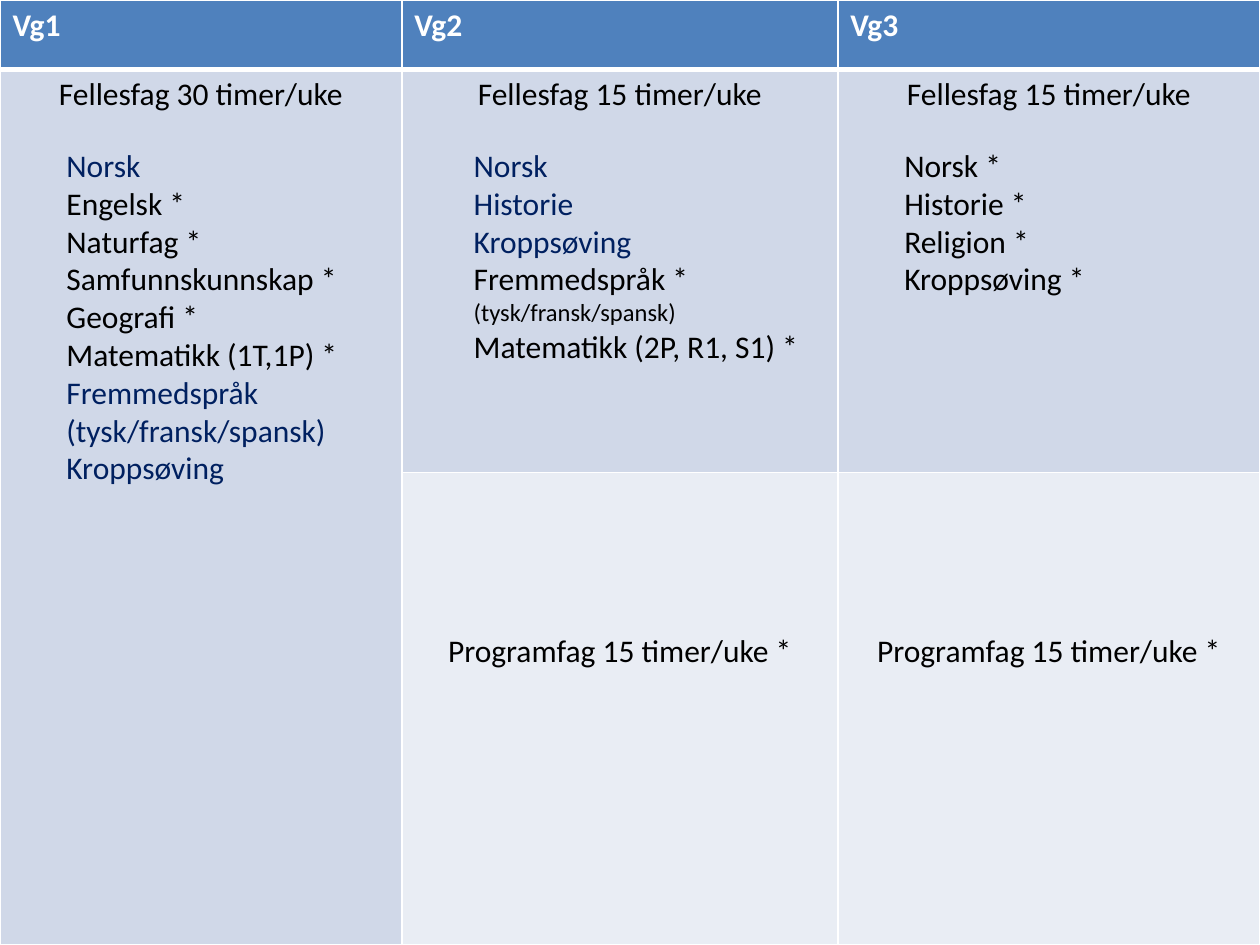
from dataclasses import dataclass

import lxml.etree
import pptx
import pptx.dml.color
import pptx.enum.text
import pptx.oxml.ns
import pptx.util

Cm = pptx.util.Cm
ALIGN = pptx.enum.text.PP_ALIGN

COLORS = {
    "header": "4F81BD",
    "common": "D0D8E8",
    "programme": "E9EDF4",
    "border": "FFFFFF",
    "white": "FFFFFF",
    "black": "000000",
    "navy": "002060",
}
COLUMN_WIDTHS = (8.1, 8.79, 8.51)
ROW_HEIGHTS = (1.4, 8.13, 9.52)
SUBJECTS_TOP = 2.82


@dataclass
class Subject:
    name: str
    color: str = "black"
    note: str = ""


@dataclass
class Year:
    title: str
    common: str
    programme: str
    left: float
    width: float
    height: float
    subjects: list[Subject]


YEARS = [
    Year("Vg1", "Fellesfag 30 timer/uke", "", 1.09, 6.6, 7.19, [
        Subject("Norsk", "navy"),
        Subject("Engelsk *"),
        Subject("Naturfag *"),
        Subject("Samfunnskunnskap *"),
        Subject("Geografi *"),
        Subject("Matematikk (1T,1P) *"),
        Subject("Fremmedspråk (tysk/fransk/spansk)", "navy"),
        Subject("Kroppsøving", "navy"),
    ]),
    Year("Vg2", "Fellesfag 15 timer/uke", "Programfag 15 timer/uke *", 9.3, 7.6, 4.88, [
        Subject("Norsk", "navy"),
        Subject("Historie", "navy"),
        Subject("Kroppsøving", "navy"),
        Subject("Fremmedspråk * ", note="(tysk/fransk/spansk)"),
        Subject("Matematikk (2P, R1, S1) *"),
    ]),
    Year("Vg3", "Fellesfag 15 timer/uke", "Programfag 15 timer/uke *", 17.98, 5.41, 3.33, [
        Subject("Norsk *"),
        Subject("Historie *"),
        Subject("Religion *"),
        Subject("Kroppsøving *"),
    ]),
]


def rgb(name: str) -> pptx.dml.color.RGBColor:
    return pptx.dml.color.RGBColor.from_string(COLORS[name])


def style_run(run, color: str, size: int = 18, bold: bool = False) -> None:
    run.font.name = "Calibri"
    run.font.size = pptx.util.Pt(size)
    run.font.bold = bold
    run.font.color.rgb = rgb(color)


def set_borders(cell, widths: dict[str, int]) -> None:
    """Draw the cell edges; widths are in points, keyed by L, R, T, B."""
    qn = pptx.oxml.ns.qn
    properties = cell._tc.get_or_add_tcPr()
    for side, width in widths.items():
        edge = lxml.etree.SubElement(properties, qn(f"a:ln{side}"), w=str(pptx.util.Pt(width)))
        fill = lxml.etree.SubElement(edge, qn("a:solidFill"))
        lxml.etree.SubElement(fill, qn("a:srgbClr"), val=COLORS["border"])


def fill_cell(cell, text: str, row: int) -> None:
    set_borders(cell, {"L": 1, "R": 1, "T": 3 if row == 1 else 1, "B": 3 if row == 0 else 1})
    cell.fill.solid()
    cell.fill.fore_color.rgb = rgb(("header", "common", "programme")[row])
    if not text:
        return
    cell.text_frame.text = text
    paragraph = cell.text_frame.paragraphs[0]
    paragraph.alignment = ALIGN.LEFT if row == 0 else ALIGN.CENTER
    style_run(paragraph.runs[0], "white" if row == 0 else "black", bold=row == 0)
    if row == 2:
        cell.margin_top = Cm(3.23)


def add_timetable(slide) -> None:
    table = slide.shapes.add_table(
        len(ROW_HEIGHTS), len(YEARS), 0, 0,
        Cm(sum(COLUMN_WIDTHS)), Cm(sum(ROW_HEIGHTS))).table
    for column, width in zip(table.columns, COLUMN_WIDTHS):
        column.width = Cm(width)
    for row, height in zip(table.rows, ROW_HEIGHTS):
        row.height = Cm(height)
    for column, year in enumerate(YEARS):
        for row, text in enumerate((year.title, year.common, year.programme)):
            fill_cell(table.cell(row, column), text, row)
    # The first year has common subjects only
    table.cell(1, 0).merge(table.cell(2, 0))


def add_subjects(slide, year: Year) -> None:
    frame = slide.shapes.add_textbox(
        Cm(year.left), Cm(SUBJECTS_TOP), Cm(year.width), Cm(year.height)).text_frame
    frame.word_wrap = True
    frame.text = "\n".join(subject.name for subject in year.subjects)
    for paragraph, subject in zip(frame.paragraphs, year.subjects):
        style_run(paragraph.runs[0], subject.color)
        if subject.note:
            note = paragraph.add_run()
            note.text = subject.note
            style_run(note, subject.color, size=14)


def main() -> None:
    presentation = pptx.Presentation()
    presentation.slide_width = Cm(25.4)
    presentation.slide_height = Cm(19.05)
    slide = presentation.slides.add_slide(presentation.slide_layouts[6])

    # Table of weekly hours
    add_timetable(slide)

    # Subject lists over the table
    for year in YEARS:
        add_subjects(slide, year)

    presentation.save("out.pptx")


if __name__ == "__main__":
    main()
